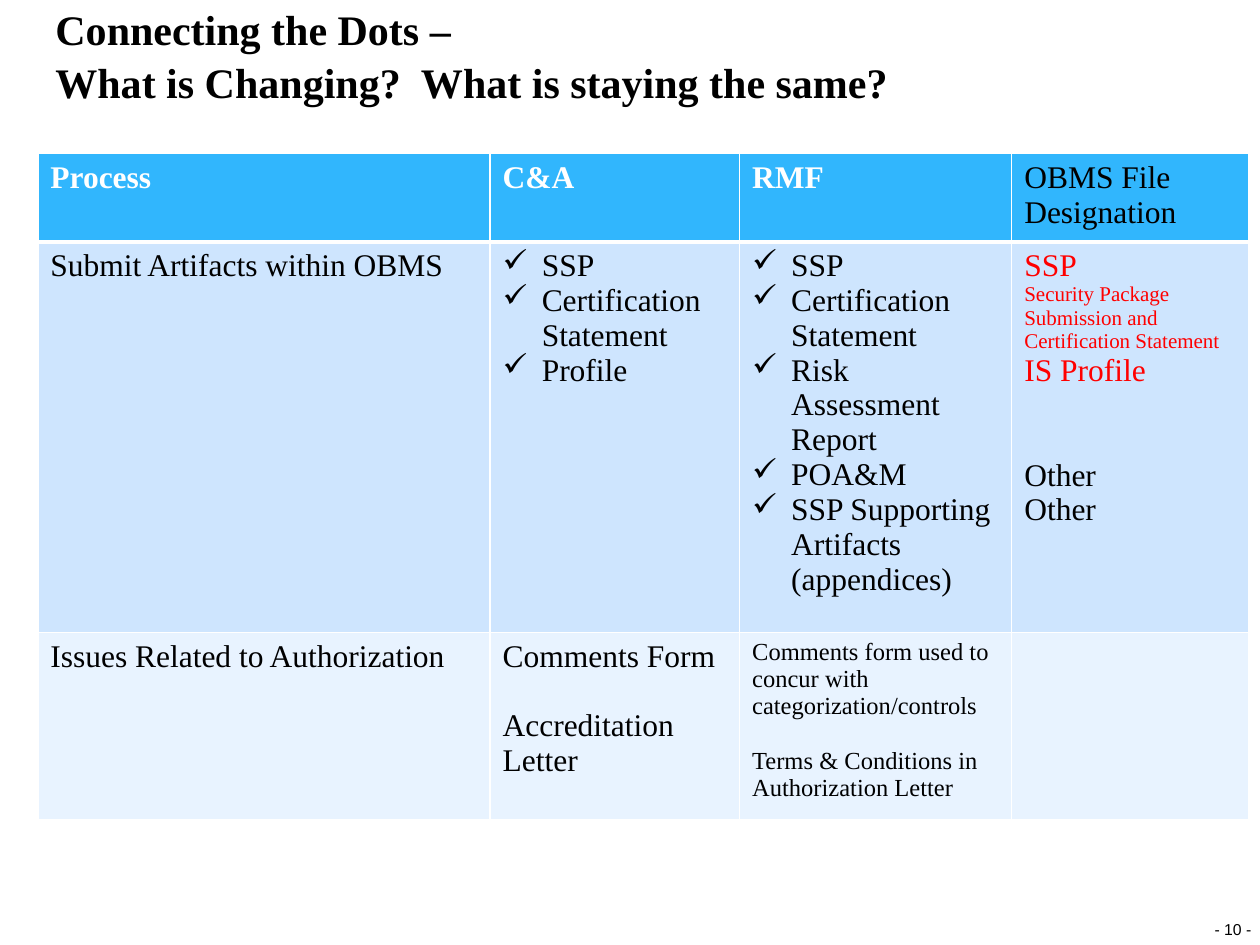
import pptx
import pptx.util
import pptx.dml.color
import pptx.enum.text
import pptx.oxml
import pptx.oxml.ns
from pptx.util import Inches

HUES = {
    "ink": "000000",
    "white": "FFFFFF",
    "red": "FF0000",
    "head": "31B6FD",
    "band": "CEE5FE",
    "pale": "E8F3FF",
}
SERIF = "Times New Roman"
COLS = [3.59, 1.98, 2.16, 1.88]
ROWS = [0.65, 2.87, 1.39]
FILLS = ["head", "band", "pale"]


def line(text, size=18, hue="ink", bold=False, gap=0, tick=False):
    return dict(text=text, size=size, hue=hue, bold=bold, gap=gap, tick=tick)


def ticks(*texts):
    return [line(text, tick=True) for text in texts]


CELLS = [
    [[line(text, hue="white", bold=True)] for text in ("Process", "C&A", "RMF")]
    + [[line("OBMS File Designation")]],
    [
        [line("Submit Artifacts within OBMS")],
        ticks("SSP", "Certification Statement", "Profile"),
        ticks("SSP", "Certification Statement", "Risk Assessment Report",
              "POA&M", "SSP Supporting Artifacts (appendices)"),
        [
            line("SSP", hue="red"),
            line("Security Package Submission and Certification Statement", 12, "red"),
            line("IS Profile", hue="red"),
            line("Other", gap=40),
            line("Other"),
        ],
    ],
    [
        [line("Issues Related to Authorization")],
        [line("Comments Form"), line("Accreditation Letter", gap=20)],
        [
            line("Comments form used to concur with categorization/controls", 14),
            line("Terms & Conditions in Authorization Letter", 14, gap=15.5),
        ],
        [],
    ],
]


def rgb(hue):
    return pptx.dml.color.RGBColor.from_string(HUES[hue])


def node(xml):
    return pptx.oxml.parse_xml(xml.replace(" ", f" {pptx.oxml.ns.nsdecls('a')} ", 1))


def style(para, size, hue="ink", bold=False, face=SERIF):
    for run in para.runs:
        run.font.name = face
        run.font.size = pptx.util.Pt(size)
        run.font.bold = bold
        run.font.color.rgb = rgb(hue)


def add_tick(para):
    props = para._p.get_or_add_pPr()
    props.set("marL", str(Inches(0.31)))
    props.set("indent", str(Inches(-0.31)))
    props.append(node('<a:buChar char="✓"/>'))


def write(frame, lines):
    for i, item in enumerate(lines):
        para = frame.paragraphs[0] if i == 0 else frame.add_paragraph()
        para.text = item["text"]
        if item["gap"]:
            para.space_before = pptx.util.Pt(item["gap"])
        if item["tick"]:
            add_tick(para)
        style(para, item["size"], item["hue"], item["bold"])


def edge(cell, row):
    props = cell._tc.get_or_add_tcPr()
    wide = {"T": 3 if row == 1 else 1, "B": 3 if row == 0 else 1}
    for side in "LRTB":
        width = pptx.util.Pt(wide.get(side, 1))
        props.append(node(
            f'<a:ln{side} w="{width}"><a:solidFill>'
            f'<a:srgbClr val="{HUES["white"]}"/></a:solidFill></a:ln{side}>'))


def add_label(slide, box, text, size, face=SERIF, bold=False, wrap=True):
    shape = slide.shapes.add_textbox(*map(Inches, box))
    frame = shape.text_frame
    frame.word_wrap = wrap
    frame.vertical_anchor = pptx.enum.text.MSO_ANCHOR.BOTTOM
    frame.margin_left = frame.margin_right = 0
    frame.margin_top = frame.margin_bottom = 0
    para = frame.paragraphs[0]
    para.text = text
    para.line_spacing = 1.06
    style(para, size, bold=bold, face=face)
    return para


def add_title(slide, box):
    text = "Connecting the Dots –\vWhat is Changing?  What is staying the same?"
    add_label(slide, box, text, 24, bold=True)


def add_grid(slide, box):
    left, top, width, height = box
    table = slide.shapes.add_table(
        len(ROWS), len(COLS), *map(Inches, box)).table
    table.horz_banding = False
    for col, part in zip(table.columns, COLS):
        col.width = Inches(width * part / sum(COLS))
    for row, part in zip(table.rows, ROWS):
        row.height = Inches(height * part / sum(ROWS))
    for r, cells in enumerate(CELLS):
        for c, lines in enumerate(cells):
            cell = table.cell(r, c)
            edge(cell, r)
            cell.fill.solid()
            cell.fill.fore_color.rgb = rgb(FILLS[r])
            write(cell.text_frame, lines)


def add_page(slide, box):
    para = add_label(slide, box, "- 10 -", 9, face="Arial", wrap=False)
    para.alignment = pptx.enum.text.PP_ALIGN.CENTER


def main():
    deck = pptx.Presentation()
    deck.slide_width, deck.slide_height = Inches(10), Inches(7.5)
    slide = deck.slides.add_slide(deck.slide_layouts[6])
    add_page(slide, (9.63, 7.29, 0.31, 0.16))
    add_title(slide, (0.44, -0.01, 7.04, 0.86))
    add_grid(slide, (0.3, 1.22, sum(COLS), sum(ROWS)))
    deck.save("out.pptx")


if __name__ == "__main__":
    main()
